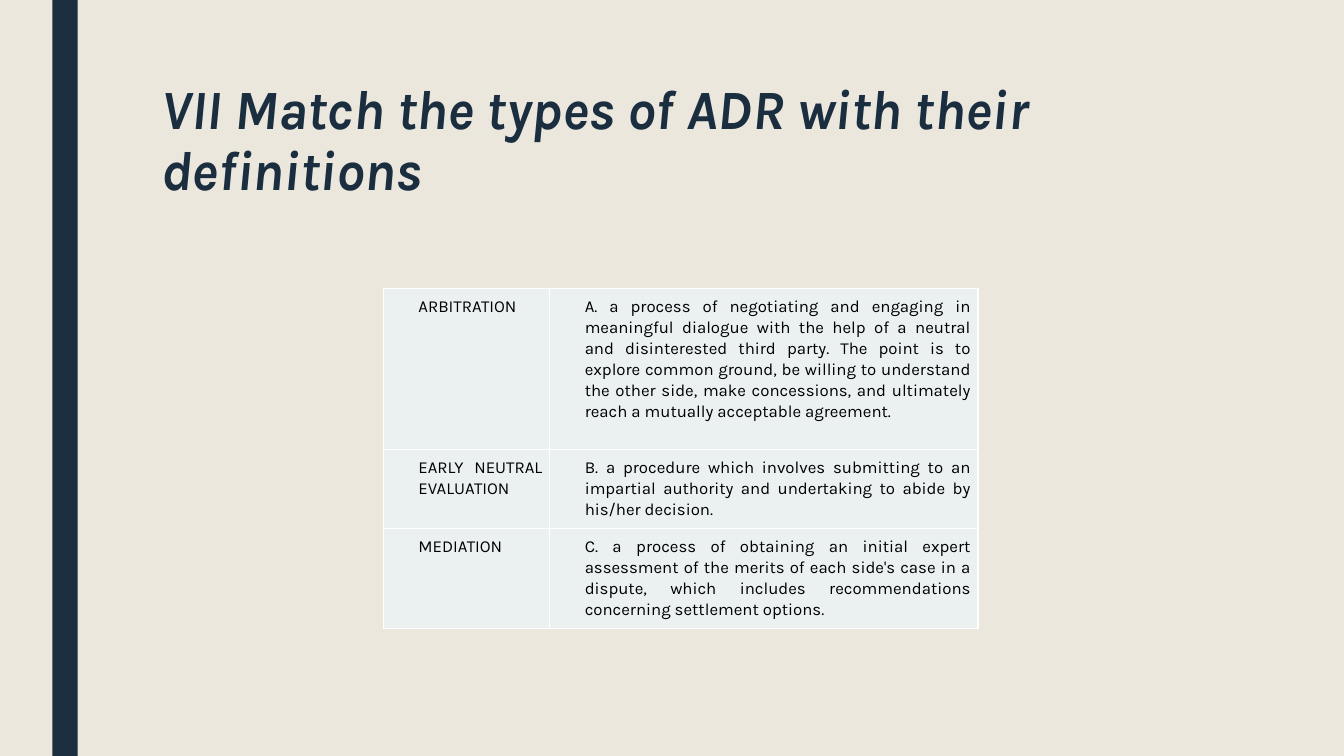
from lxml import etree
from pptx import Presentation
from pptx.dml.color import RGBColor
from pptx.enum.shapes import MSO_SHAPE as SHAPE
from pptx.enum.text import MSO_ANCHOR as ANCHOR, PP_ALIGN as ALIGN
from pptx.oxml.ns import qn
from pptx.util import Inches, Pt

FONT = "Karla"
NAVY, SAND, PALE, WHITE, BLACK = "1A2E40", "EBE7DD", "EBF0F1", "FFFFFF", "000000"


def paint(fill, color):
    fill.solid()
    fill.fore_color.rgb = RGBColor.from_string(color)


def add_run(p, text, size, color, strong=False):
    r = p.add_run()
    r.text = text
    r.font.name = FONT
    r.font.size = Pt(size)
    r.font.bold = r.font.italic = strong
    paint(r.font.fill, color)


prs = Presentation()
prs.slide_width, prs.slide_height = Inches(13.33), Inches(7.5)
s = prs.slides.add_slide(prs.slide_layouts[6])
paint(s.background.fill, SAND)

# Side bar, full slide height
bar = s.shapes.add_shape(SHAPE.RECTANGLE, Inches(0.52), 0, Inches(0.25), prs.slide_height)
bar.shadow.inherit = False
paint(bar.fill, NAVY)
bar.line.fill.background()

# Title
title = s.shapes.add_textbox(Inches(1.5), Inches(0.75), Inches(10.5), Inches(1.62))
tf = title.text_frame
tf.word_wrap = True
tf.vertical_anchor = ANCHOR.TOP
p = tf.paragraphs[0]
p.line_spacing = 0.92
add_run(p, "VII Match the types of ADR with their definitions", 39.6, NAVY, strong=True)

# Table of terms and definitions
rows = [
    (1.6, "ARBITRATION",
     "A. a process of negotiating and engaging in meaningful dialogue with the help of "
     "a neutral and disinterested third party. The point is to explore common ground, "
     "be willing to understand the other side, make concessions, and ultimately reach "
     "a mutually acceptable agreement."),
    (0.76, "EARLY NEUTRAL EVALUATION",
     "B. a procedure which involves submitting to an impartial authority and "
     "undertaking to abide by his/her decision."),
    (0.97, "MEDIATION",
     "C. a process of obtaining an initial expert assessment of the merits of each "
     "side's case in a dispute, which includes recommendations concerning settlement "
     "options."),
]
col_widths = [1.65, 4.25]
table = s.shapes.add_table(len(rows), len(col_widths), Inches(3.8), Inches(2.86),
                           Inches(sum(col_widths)),
                           Inches(sum(row[0] for row in rows))).table
table.first_row = table.horz_banding = False
for col, width in zip(table.columns, col_widths):
    col.width = Inches(width)

for i, (height, *texts) in enumerate(rows):
    table.rows[i].height = Inches(height)
    for j, text in enumerate(texts):
        cell = table.cell(i, j)
        cell.margin_left = cell.margin_right = Inches(0.07)
        cell.margin_top = cell.margin_bottom = Inches(0.07)
        cell.vertical_anchor = ANCHOR.TOP
        p = cell.text_frame.paragraphs[0]
        p.alignment = ALIGN.JUSTIFY
        p.line_spacing = 1.07
        pPr = p._p.get_or_add_pPr()
        pPr.set("marL", str(Inches(0.28)))
        pPr.set("indent", "0")
        add_run(p, text, 12, BLACK)

        # White borders come before the fill in the cell properties
        tcPr = cell._tc.get_or_add_tcPr()
        for side in ("lnL", "lnR", "lnT", "lnB"):
            ln = etree.SubElement(tcPr, qn(f"a:{side}"), w=str(Pt(1)))
            solid = etree.SubElement(ln, qn("a:solidFill"))
            etree.SubElement(solid, qn("a:srgbClr"), val=WHITE)
        paint(cell.fill, PALE)

prs.save("out.pptx")
